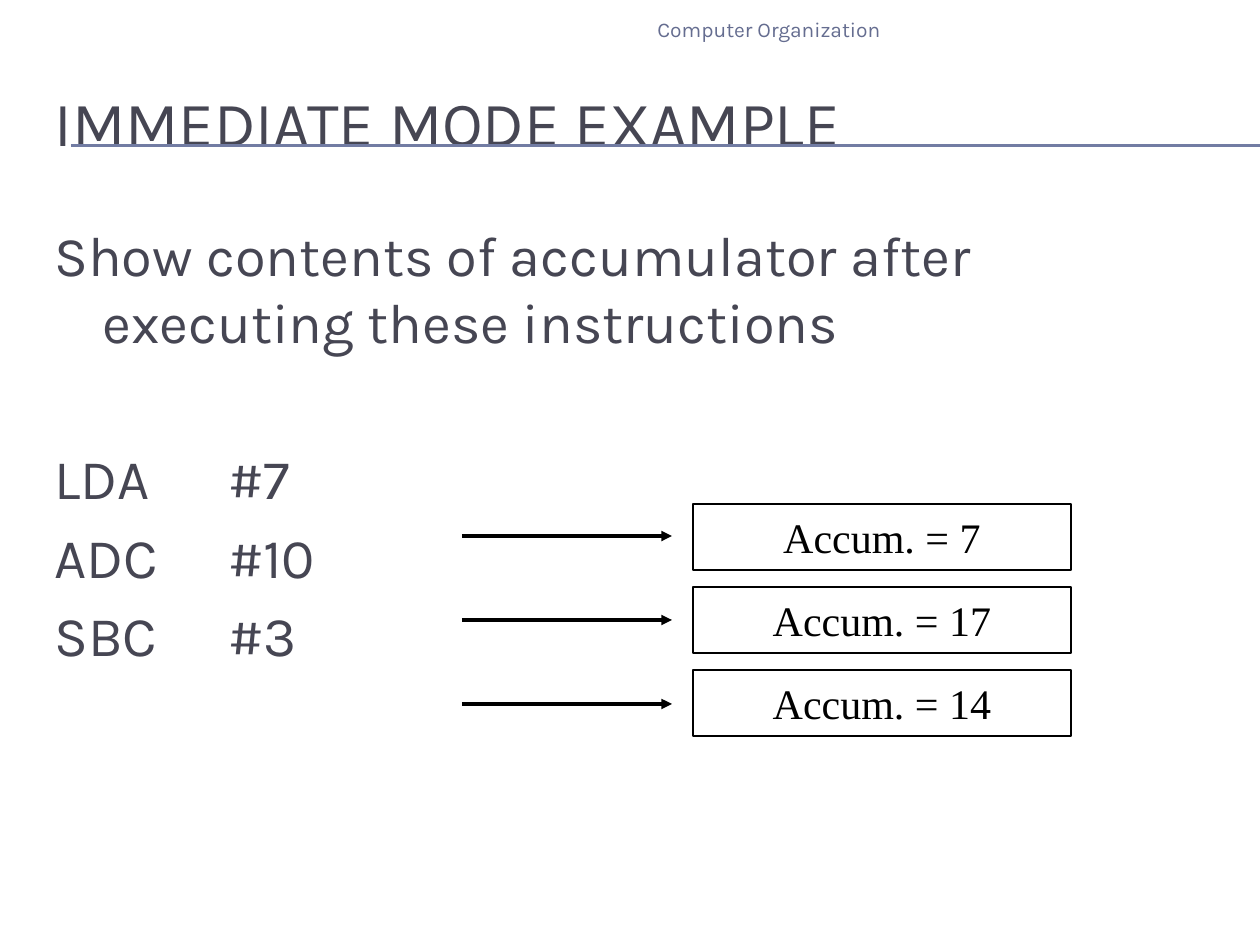
"""Build the slide on immediate mode addressing."""
from lxml import etree
from pptx import Presentation
from pptx import util as u
from pptx.dml.color import RGBColor
from pptx.enum import shapes, text
from pptx.oxml.ns import qn

COLORS = {"ink": "464653", "rule": "727CA3", "header": "656D90", "black": "000000"}
ALIGN = text.PP_ALIGN
ANCHOR = text.MSO_ANCHOR


def px(n):
    return u.Emu(round(n * 914400 / 126))


def write(p, content, size=32, font="Karla", color="ink", align=ALIGN.LEFT, before=0, hang=0):
    p.alignment = align
    p.space_before = u.Pt(before)
    if hang:
        pPr = p._p.get_or_add_pPr()
        pPr.set("marL", str(px(hang)))
        pPr.set("indent", str(-px(hang)))
    r = p.add_run()
    r.text = content
    r.font.size = u.Pt(size)
    r.font.name = font
    r.font.color.rgb = RGBColor.from_string(COLORS[color])


class Deck:
    def __init__(self, width, height):
        self.prs = Presentation()
        self.prs.slide_width, self.prs.slide_height = px(width), px(height)
        self.s = self.prs.slides.add_slide(self.prs.slide_layouts[5])

    def title(self, x, y, w, h, content, **style):
        sp = self.s.shapes.title
        sp.left, sp.top, sp.width, sp.height = map(px, (x, y, w, h))
        tf = sp.text_frame
        tf.vertical_anchor = ANCHOR.MIDDLE
        write(tf.paragraphs[0], content, **style)

    def text(self, x, y, w, h, paragraphs, **style):
        tf = self.s.shapes.add_textbox(*map(px, (x, y, w, h))).text_frame
        tf.word_wrap = True
        for i, (content, before) in enumerate(paragraphs):
            p = tf.add_paragraph() if i else tf.paragraphs[0]
            write(p, content, before=before, **style)

    def box(self, x, y, w, h, content, **style):
        sp = self.s.shapes.add_shape(shapes.MSO_SHAPE.RECTANGLE, *map(px, (x, y, w, h)))
        sp.shadow.inherit = False
        sp.fill.background()
        sp.line.color.rgb = RGBColor.from_string(COLORS["black"])
        sp.line.width = u.Pt(1.25)
        tf = sp.text_frame
        tf.vertical_anchor = ANCHOR.MIDDLE
        write(tf.paragraphs[0], content, **style)

    def line(self, x1, x2, y, color, width, arrow=False):
        sp = self.s.shapes.add_connector(shapes.MSO_CONNECTOR.STRAIGHT, *map(px, (x1, y, x2, y)))
        sp.line.color.rgb = RGBColor.from_string(COLORS[color])
        sp.line.width = u.Pt(width)
        if arrow:
            etree.SubElement(sp.line._get_or_add_ln(), qn("a:tailEnd"), type="triangle")
        etree.SubElement(sp._element.spPr, qn("a:effectLst"))


def main():
    deck = Deck(1260, 945)
    for y in (145, 146):
        deck.line(71, 1260, y, "rule", 0.75)
    deck.title(42, 63, 1197, 116, "IMMEDIATE MODE EXAMPLE", size=36)
    body = [
        ("Show contents of accumulator after executing these instructions", 6.4),
        ("LDA\t\t#7", 51),
        ("ADC\t\t#10", 6.4),
        ("SBC\t\t#3", 6.4),
    ]
    deck.text(42, 214, 1197, 624, body, hang=48)
    for i, value in enumerate((7, 17, 14)):
        deck.box(693, 504 + 83 * i, 378, 66, f"Accum. = {value}", size=24,
                 font="Times New Roman", color="black", align=ALIGN.CENTER)
        deck.line(462, 672, 536 + 84 * i, "black", 2, arrow=True)
    deck.text(431, 10, 462, 40, [("Computer Organization", 0)], size=12,
              color="header", align=ALIGN.RIGHT)
    deck.prs.save("out.pptx")


if __name__ == "__main__":
    main()
